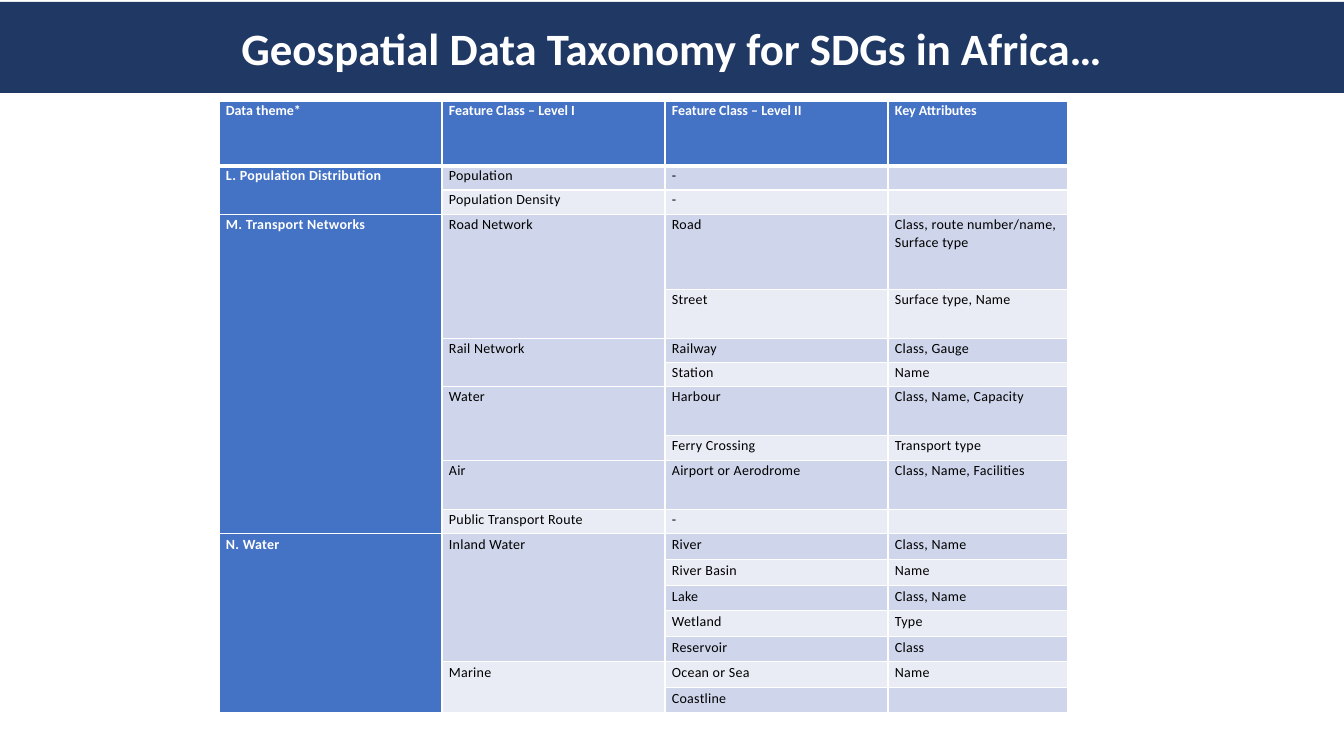
from lxml import etree
from pptx import Presentation, util as u
from pptx.dml.color import RGBColor
from pptx.enum import text
from pptx.oxml import parse_xml
from pptx.oxml.ns import nsdecls

HEADING = "Geospatial Data Taxonomy for SDGs in Africa…"
HEADERS = ("Data theme*", "Feature Class – Level I", "Feature Class – Level II", "Key Attributes")

# (row height, theme, level I, level II, attributes); None continues the cell above
FEATURES = [
    (24, "L. Population Distribution", "Population", "-", ""),
    (25, None, "Population Density", "-", ""),
    (75, "M. Transport Networks", "Road Network", "Road", "Class, route number/name, Surface type"),
    (49, None, None, "Street", "Surface type, Name"),
    (24, None, "Rail Network", "Railway", "Class, Gauge"),
    (24, None, None, "Station", "Name"),
    (49, None, "Water", "Harbour", "Class, Name, Capacity"),
    (25, None, None, "Ferry Crossing", "Transport type"),
    (49, None, "Air", "Airport or Aerodrome", "Class, Name, Facilities"),
    (24, None, "Public Transport Route", "-", ""),
    (26, "N. Water", "Inland Water", "River", "Class, Name"),
    (26, None, None, "River Basin", "Name"),
    (25, None, None, "Lake", "Class, Name"),
    (26, None, None, "Wetland", "Type"),
    (25, None, None, "Reservoir", "Class"),
    (26, None, "Marine", "Ocean or Sea", "Name"),
    (25, None, None, "Coastline", ""),
]
HEADER_HEIGHT = 65
WATER_ROW = 11
COLUMN_WIDTHS = (223, 223, 223, 180)
TABLE_LEFT, TABLE_TOP = 219, 101

NAVY, BLUE, WHITE, BLACK = "1F3864", "4472C4", "FFFFFF", "000000"
BANDS = ("E9EBF5", "CFD5EA")


def px(length):
    return round(length * 914400 / 100.8)


def color(hex_code):
    return RGBColor.from_string(hex_code)


def set_all(target, values):
    for name, value in values.items():
        setattr(target, name, value)


def paint(shape, hex_code):
    shape.fill.solid()
    shape.fill.fore_color.rgb = color(hex_code)


def style_font(font, size, hex_code, bold):
    set_all(font, {"name": "Calibri", "size": u.Pt(size), "bold": bold})
    font.color.rgb = color(hex_code)


def add_borders(cell, widths):
    """Draw white borders; widths in points go left, right, top, bottom."""
    for place, (side, width) in enumerate(zip("LRTB", widths)):
        line = parse_xml(
            f'<a:ln{side} {nsdecls("a")} w="{u.Pt(width)}"><a:solidFill>'
            f'<a:srgbClr val="{WHITE}"/></a:solidFill></a:ln{side}>')
        cell._tc.get_or_add_tcPr().insert(place, line)


def add_heading(slide):
    heading = slide.shapes.title
    set_all(heading, {"left": 0, "top": px(2), "width": px(1344), "height": px(91)})
    outline = parse_xml(f'<a:prstGeom {nsdecls("a")} prst="roundRect"><a:avLst/></a:prstGeom>')
    heading._element.spPr.append(outline)
    paint(heading, NAVY)
    frame = heading.text_frame
    frame.text = HEADING
    set_all(frame, {"vertical_anchor": text.MSO_ANCHOR.MIDDLE, "word_wrap": True,
                    "auto_size": text.MSO_AUTO_SIZE.NONE})
    set_all(frame, {f"margin_{side}": px(10) for side in ("left", "right", "top", "bottom")})
    frame.paragraphs[0].alignment = text.PP_ALIGN.CENTER
    style_font(frame.paragraphs[0].runs[0].font, 32, WHITE, True)


def fill_cell(cell, words, row, column):
    is_label = row == 0 or column == 0
    paint(cell, BLUE if is_label else BANDS[row % 2])
    set_all(cell, {"margin_left": px(7), "margin_right": px(7),
                   "margin_top": 0, "margin_bottom": 0})
    add_borders(cell, (1, 1, 3 if row == 1 else 1, 3 if row == 0 else 1))
    paragraph = cell.text_frame.paragraphs[0]
    paragraph.line_spacing = 1.15 if row >= WATER_ROW else 1.07
    if row:
        paragraph.space_after = u.Pt(6)
    if not words:
        # Keeps an empty cell from stretching its row
        paragraph._p.get_or_add_endParaRPr().set("sz", "1000")
        return
    run = paragraph.add_run()
    run.text = words
    style_font(run.font, 10, WHITE if is_label else BLACK, is_label)
    if row:
        run._r.get_or_add_rPr().set("spc", "20")


def add_taxonomy(slide):
    heights = [HEADER_HEIGHT] + [feature[0] for feature in FEATURES]
    rows = [HEADERS] + [feature[1:] for feature in FEATURES]
    taxonomy = slide.shapes.add_table(
        len(rows), len(HEADERS), px(TABLE_LEFT), px(TABLE_TOP),
        px(sum(COLUMN_WIDTHS)), px(sum(heights))).table
    set_all(taxonomy, {"first_row": True, "horz_banding": True, "first_col": True})
    for column, width in enumerate(COLUMN_WIDTHS):
        taxonomy.columns[column].width = px(width)
    for row, height in enumerate(heights):
        taxonomy.rows[row].height = px(height)
        for column, words in enumerate(rows[row]):
            fill_cell(taxonomy.cell(row, column), words, row, column)
    for column in range(len(HEADERS)):
        starts = [row for row, cells in enumerate(rows) if cells[column] is not None]
        for start, end in zip(starts, starts[1:] + [len(rows)]):
            if end - start > 1:
                taxonomy.cell(start, column).merge(taxonomy.cell(end - 1, column))


def main():
    deck = Presentation()
    set_all(deck, {"slide_width": px(1344), "slide_height": px(756)})
    slide = deck.slides.add_slide(deck.slide_layouts[5])
    add_heading(slide)
    add_taxonomy(slide)
    deck.save("out.pptx")


if __name__ == "__main__":
    main()
